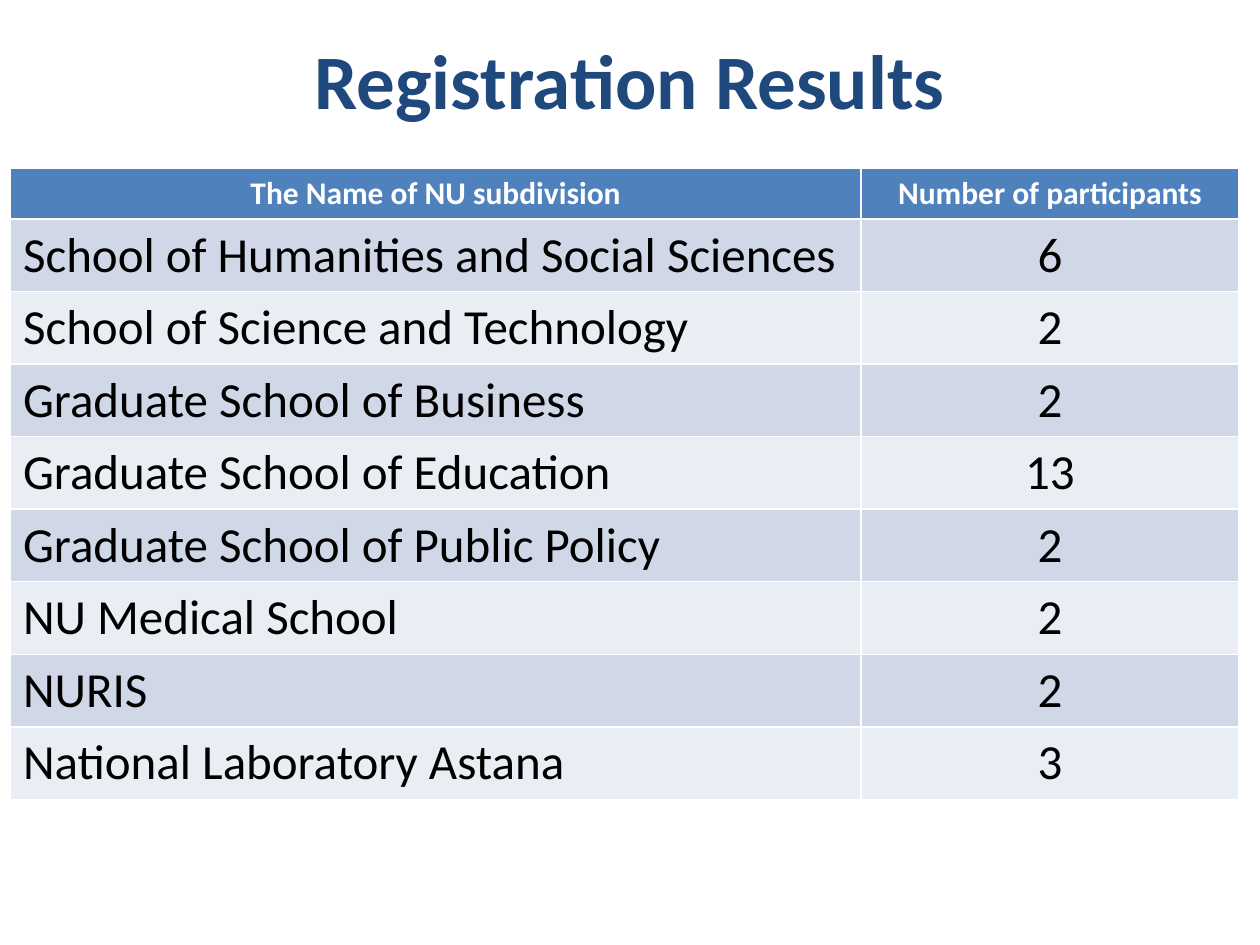
"""Build the registration results slide with its table of subdivisions."""
from dataclasses import dataclass

from pptx import Presentation
from pptx.dml.color import RGBColor
from pptx.enum.text import MSO_ANCHOR as Anchor, PP_ALIGN as Align
from pptx.util import Pt


@dataclass(frozen=True)
class Subdivision:
    name: str
    participants: int


@dataclass(frozen=True)
class TextStyle:
    size: float
    color: str
    bold: bool


TITLE = TextStyle(44, "1F497D", True)
HEADER = TextStyle(18, "FFFFFF", True)
BODY = TextStyle(28, "000000", False)
HEADER_FILL = "4F81BD"
BAND_FILLS = ("D0D8E8", "E9EDF4")
HEADER_HEIGHT, BODY_HEIGHT = 29.2, 41.4
NAME_WIDTH, COUNT_WIDTH = 486, 216
HEADINGS = ("The Name of NU subdivision", "Number of participants")
SUBDIVISIONS = (
    Subdivision("School of Humanities and Social Sciences", 6),
    Subdivision("School of Science and Technology", 2),
    Subdivision("Graduate School of Business", 2),
    Subdivision("Graduate School of Education", 13),
    Subdivision("Graduate School of Public Policy", 2),
    Subdivision("NU Medical School", 2),
    Subdivision("NURIS", 2),
    Subdivision("National Laboratory Astana", 3),
)


def rgb(value: str) -> RGBColor:
    return RGBColor.from_string(value)


def write(frame, text: str, style: TextStyle, align: Align) -> None:
    frame.text = text
    paragraph = frame.paragraphs[0]
    paragraph.alignment = align
    font = paragraph.font
    font.name = "Calibri"
    font.size = Pt(style.size)
    font.bold = style.bold
    font.color.rgb = rgb(style.color)


def fill_cell(cell, text: str, style: TextStyle, align: Align, fill: str) -> None:
    cell.fill.solid()
    cell.fill.fore_color.rgb = rgb(fill)
    write(cell.text_frame, text, style, align)


def add_title(slide, text: str) -> None:
    title = slide.shapes.title
    title.left, title.top, title.width, title.height = Pt(36), Pt(0), Pt(648), Pt(90)
    title.text_frame.vertical_anchor = Anchor.MIDDLE
    write(title.text_frame, text, TITLE, Align.CENTER)


def add_results(slide, subdivisions: tuple[Subdivision, ...]) -> None:
    height = HEADER_HEIGHT + BODY_HEIGHT * len(subdivisions)
    results = slide.shapes.add_table(
        len(subdivisions) + 1, len(HEADINGS),
        Pt(6), Pt(96), Pt(NAME_WIDTH + COUNT_WIDTH), Pt(height),
    ).table
    for column, width in zip(results.columns, (NAME_WIDTH, COUNT_WIDTH)):
        column.width = Pt(width)
    results.rows[0].height = Pt(HEADER_HEIGHT)
    for column, heading in enumerate(HEADINGS):
        fill_cell(results.cell(0, column), heading, HEADER, Align.CENTER, HEADER_FILL)
    for row, subdivision in enumerate(subdivisions, start=1):
        results.rows[row].height = Pt(BODY_HEIGHT)
        fill = BAND_FILLS[(row - 1) % len(BAND_FILLS)]
        fill_cell(results.cell(row, 0), subdivision.name, BODY, Align.LEFT, fill)
        fill_cell(results.cell(row, 1), str(subdivision.participants), BODY, Align.CENTER, fill)


def main() -> None:
    presentation = Presentation()
    presentation.slide_width, presentation.slide_height = Pt(720), Pt(540)
    slide = presentation.slides.add_slide(presentation.slide_layouts[5])
    add_title(slide, "Registration Results")
    add_results(slide, SUBDIVISIONS)
    presentation.save("out.pptx")


if __name__ == "__main__":
    main()
